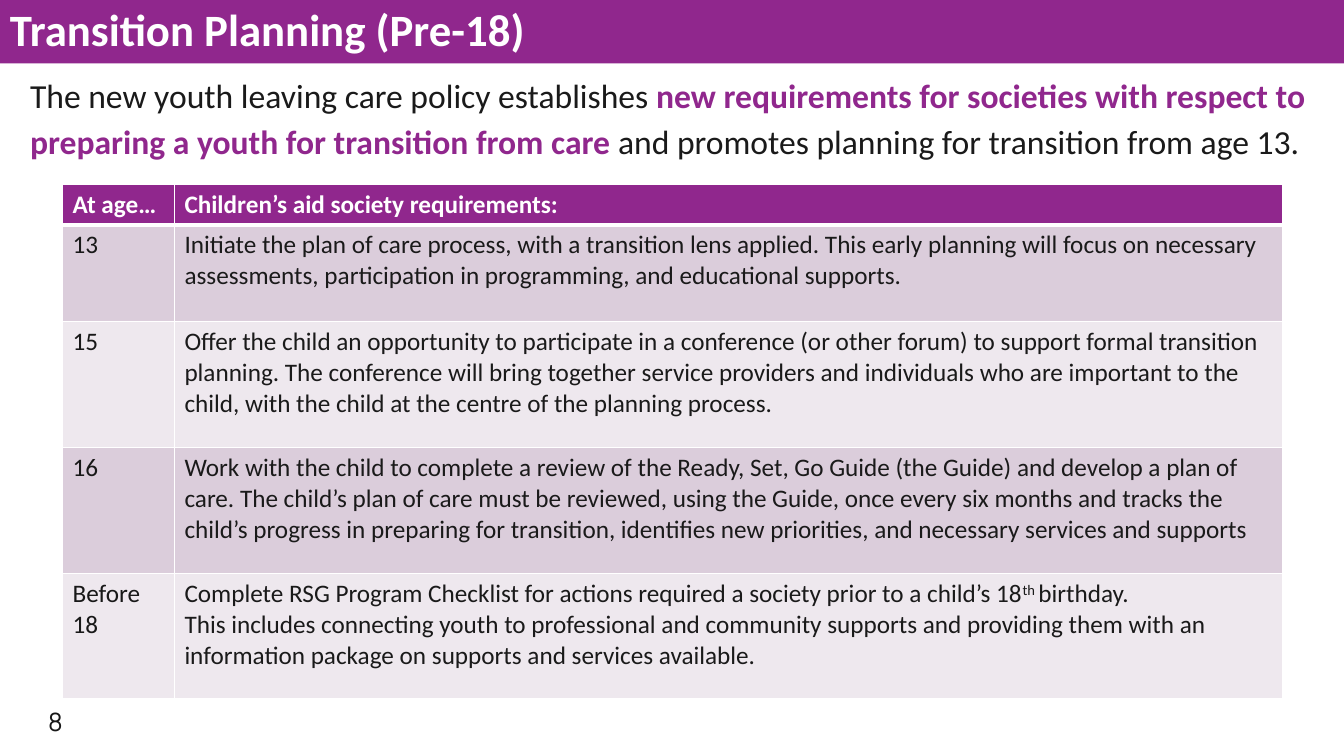
from lxml import etree
from pptx import Presentation
from pptx.dml.color import RGBColor
from pptx.enum.text import MSO_ANCHOR
from pptx.oxml.ns import qn
from pptx.util import Inches, Pt

MIDDLE = MSO_ANCHOR.MIDDLE
PURPLE = RGBColor(0x90, 0x27, 0x8D)
WHITE = RGBColor(0xFF, 0xFF, 0xFF)
INK = RGBColor(0x1A, 0x1A, 0x1A)
DARK = RGBColor(0x18, 0x18, 0x18)
BANDS = [RGBColor(0xEE, 0xE8, 0xEE), RGBColor(0xDB, 0xCD, 0xDB)]
COLS = [1.11, 10.99]
ROWS = [0.39, 0.96, 1.25, 1.25, 1.24]

INTRO = [
    ("The new youth leaving care policy establishes ", False),
    ("new requirements for societies with respect to preparing a youth "
     "for transition from care", True),
    (" and promotes planning for transition from age 13.", False),
]
# Each cell is a list of paragraphs.
CELLS = [
    (["At age…"], ["Children’s aid society requirements:"]),
    (["13"], ["Initiate the plan of care process, with a transition lens applied. "
              "This early planning will focus on necessary assessments, "
              "participation in programming, and educational supports."]),
    (["15"], ["Offer the child an opportunity to participate in a conference "
              "(or other forum) to support formal transition planning. The "
              "conference will bring together service providers and individuals "
              "who are important to the child, with the child at the centre of "
              "the planning process."]),
    (["16"], ["Work with the child to complete a review of the Ready, Set, Go "
              "Guide (the Guide) and develop a plan of care. The child’s plan of "
              "care must be reviewed, using the Guide, once every six months and "
              "tracks the child’s progress in preparing for transition, "
              "identifies new priorities, and necessary services and supports"]),
    (["Before 18"], ["Complete RSG Program Checklist for actions required a "
                     "society prior to a child’s 18",
                     "This includes connecting youth to professional and "
                     "community supports and providing them with an information "
                     "package on supports and services available."]),
]


def style(para, size, color, bold=False, face="Calibri"):
    font = para.font
    font.name, font.size, font.bold = face, Pt(size), bold
    font.color.rgb = color


def edge(cell, side, width):
    """Draw a white border on one side of a cell: L, R, T or B."""
    line = etree.SubElement(cell._tc.get_or_add_tcPr(), qn("a:ln" + side),
                            w=str(Pt(width)))
    fill = etree.SubElement(line, qn("a:solidFill"))
    etree.SubElement(fill, qn("a:srgbClr"), val=str(WHITE))


deck = Presentation()
deck.slide_width, deck.slide_height = Inches(13.33), Inches(7.5)
slide = deck.slides.add_slide(deck.slide_layouts[6])
shapes = slide.shapes

# Title band
title = shapes.add_textbox(0, 0, deck.slide_width, Inches(0.63))
title.fill.solid()
title.fill.fore_color.rgb = PURPLE
frame = title.text_frame
frame.word_wrap = True
frame.vertical_anchor = MIDDLE
para = frame.paragraphs[0]
para.text = "Transition Planning (Pre-18)"
para.line_spacing = 0.9
style(para, 32, WHITE, True)

# Page number
page = shapes.add_textbox(Inches(0.38), Inches(6.96), Inches(0.56), Inches(0.4))
frame = page.text_frame
frame.word_wrap = True
frame.vertical_anchor = MIDDLE
para = frame.paragraphs[0]
para.text = "8"
style(para, 18, DARK, face="Manrope")

# Introduction
intro = shapes.add_textbox(Inches(0.2), Inches(0.63), Inches(12.94), Inches(1.2))
frame = intro.text_frame
frame.word_wrap = True
para = frame.paragraphs[0]
para.line_spacing = 1.15
para.space_after = Pt(6)
style(para, 24, INK)
for text, strong in INTRO:
    run = para.add_run()
    run.text = text
    if strong:
        run.font.bold = True
        run.font.color.rgb = PURPLE

# Requirements by age
table = shapes.add_table(len(ROWS), len(COLS), Inches(0.62), Inches(1.83),
                         Inches(sum(COLS)), Inches(sum(ROWS))).table
for col, width in zip(table.columns, COLS):
    col.width = Inches(width)
for row, height in zip(table.rows, ROWS):
    row.height = Inches(height)
for r, pair in enumerate(CELLS):
    head = r == 0
    for c, texts in enumerate(pair):
        cell = table.cell(r, c)
        for side in "LRTB":
            thick = (head and side == "B") or (r == 1 and side == "T")
            edge(cell, side, 3 if thick else 1)
        cell.fill.solid()
        cell.fill.fore_color.rgb = PURPLE if head else BANDS[r % 2]
        cell.text = "\n".join(texts)
        for para in cell.text_frame.paragraphs:
            style(para, 18, WHITE if head else (DARK, INK)[c], head)

# Ordinal in the last row
para = table.cell(4, 1).text_frame.paragraphs[0]
raised = para.add_run()
raised.text = "th "
raised.font._element.set("baseline", "30000")
para.add_run().text = "birthday."

deck.save("out.pptx")
